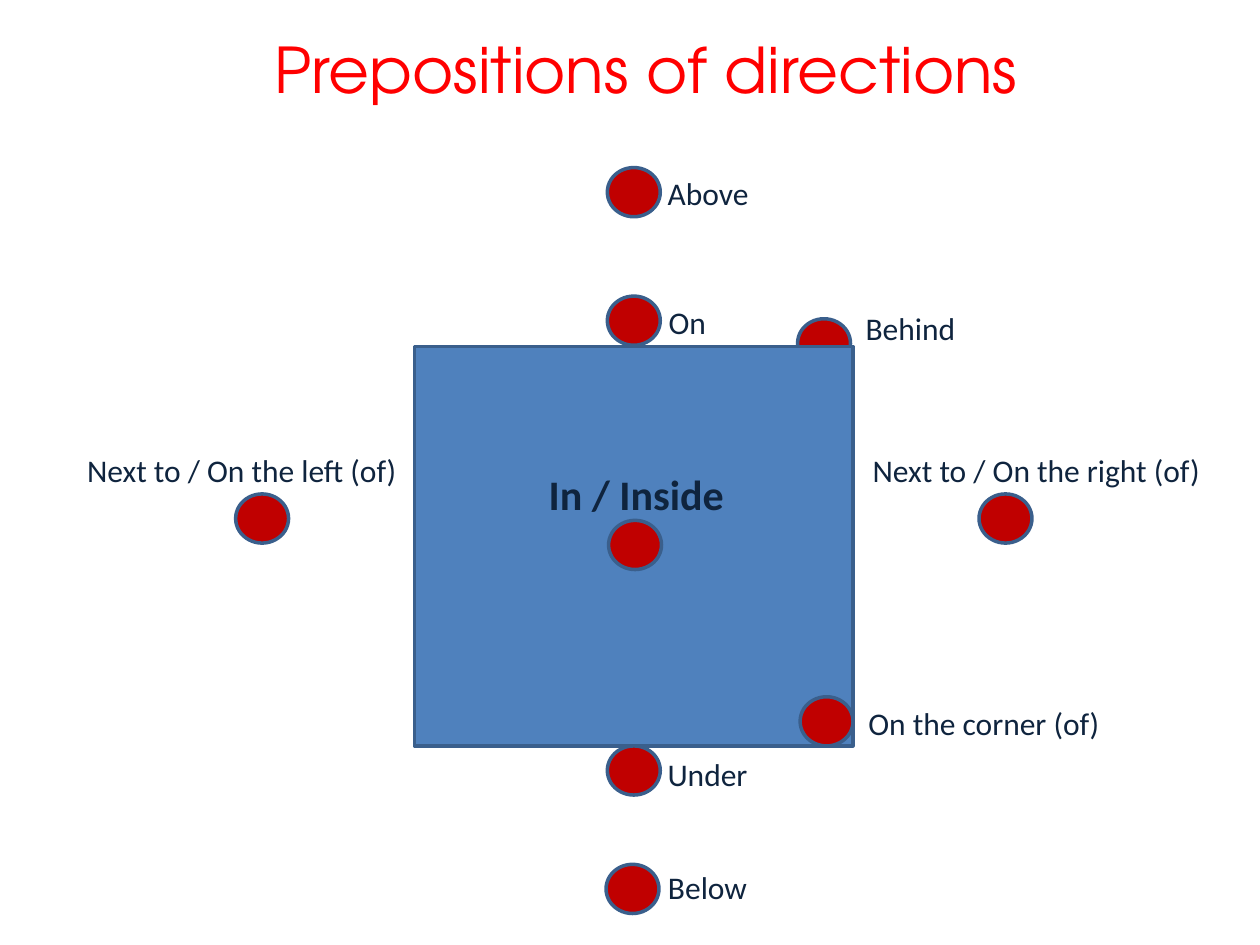
from dataclasses import dataclass
from typing import Any

from pptx import Presentation
from pptx.dml.color import RGBColor
from pptx.enum.shapes import MSO_SHAPE
from pptx.enum.text import MSO_ANCHOR, MSO_AUTO_SIZE, PP_ALIGN
from pptx.util import Inches, Pt

OVAL, RECTANGLE = MSO_SHAPE.OVAL, MSO_SHAPE.RECTANGLE
CENTER, MIDDLE = PP_ALIGN.CENTER, MSO_ANCHOR.MIDDLE
FIT_SHAPE, NO_FIT = MSO_AUTO_SIZE.SHAPE_TO_FIT_TEXT, MSO_AUTO_SIZE.NONE

COLORS = {
    "title": "FF0000",
    "label": "0F243E",
    "ball": "C00000",
    "box": "4F81BD",
    "outline": "3A5F8C",
}
COLUMNS, ROWS = 100, 75
BALL_SIZE = (4.2, 3.9)
LABEL_HEIGHT = 3.7

BOX = (32.9, 27.5, 34.8, 31.7)
BALL_BEHIND = (63.3, 25.3)
BALLS = [
    (48.2, 13.3),
    (48.2, 23.5),
    (48.3, 41.3),
    (63.5, 55.3),
    (48.1, 68.6),
    (48.2, 59.2),
    (77.7, 39.2),
    (18.7, 39.2),
]
LABELS = [
    ("Above", 51.6, 13.3, 9.2),
    ("On", 51.6, 23.6, 5.9),
    ("Below", 51.2, 68.4, 9.9),
    ("Under", 51.4, 59.4, 9.5),
    ("Next to / On the left (of)", 5.7, 35.3, 27),
    ("Next to / On the right (of)", 67.8, 35.3, 28.9),
    ("On the corner (of)", 67.8, 55.4, 20.6),
    ("Behind", 67.2, 24, 10.1),
]


@dataclass
class Diagram:
    slide: Any
    group: Any
    width: int
    height: int
    label_font: str = "Calibri"
    title_font: str = "TeX Gyre Adventor"

    def place(self, left, top, width, height):
        column, row = self.width / COLUMNS, self.height / ROWS
        return [round(v) for v in (left * column, top * row, width * column, height * row)]

    def set_text(self, frame, text, font, size, color, bold=False):
        frame.text = text
        paragraph = frame.paragraphs[0]
        paragraph.alignment = CENTER
        paragraph.font.name = font
        paragraph.font.size = Pt(size)
        paragraph.font.bold = bold
        paragraph.font.color.rgb = RGBColor.from_string(COLORS[color])

    def title(self, text, *area):
        heading = self.slide.shapes.title
        heading.left, heading.top, heading.width, heading.height = self.place(*area)
        frame = heading.text_frame
        frame.auto_size = NO_FIT
        frame.vertical_anchor = MIDDLE
        self.set_text(frame, text, self.title_font, 36, "title")

    def solid(self, kind, color, *area):
        body = self.group.shapes.add_shape(kind, *self.place(*area))
        body.shadow.inherit = False
        body.fill.solid()
        body.fill.fore_color.rgb = RGBColor.from_string(COLORS[color])
        body.line.color.rgb = RGBColor.from_string(COLORS["outline"])
        body.line.width = Pt(2)

    def ball(self, left, top):
        self.solid(OVAL, "ball", left, top, *BALL_SIZE)

    def label(self, text, left, top, width, height=LABEL_HEIGHT, size=18, bold=False):
        caption = self.group.shapes.add_textbox(*self.place(left, top, width, height))
        frame = caption.text_frame
        frame.word_wrap = False
        frame.auto_size = FIT_SHAPE
        self.set_text(frame, text, self.label_font, size, "label", bold)


def main():
    deck = Presentation()
    deck.slide_width, deck.slide_height = Inches(10), Inches(7.5)
    slide = deck.slides.add_slide(deck.slide_layouts[5])
    group = slide.shapes.add_group_shape()
    diagram = Diagram(slide, group, deck.slide_width, deck.slide_height)

    diagram.title("Prepositions of directions", 2.5, 0, 97.5, 10.8)
    diagram.ball(*BALL_BEHIND)
    diagram.solid(RECTANGLE, "box", *BOX)
    for label in LABELS:
        diagram.label(*label)
    diagram.label("In / Inside", 42.2, 36.7, 16.6, 4.6, size=24, bold=True)
    for position in BALLS:
        diagram.ball(*position)

    deck.save("out.pptx")


if __name__ == "__main__":
    main()
